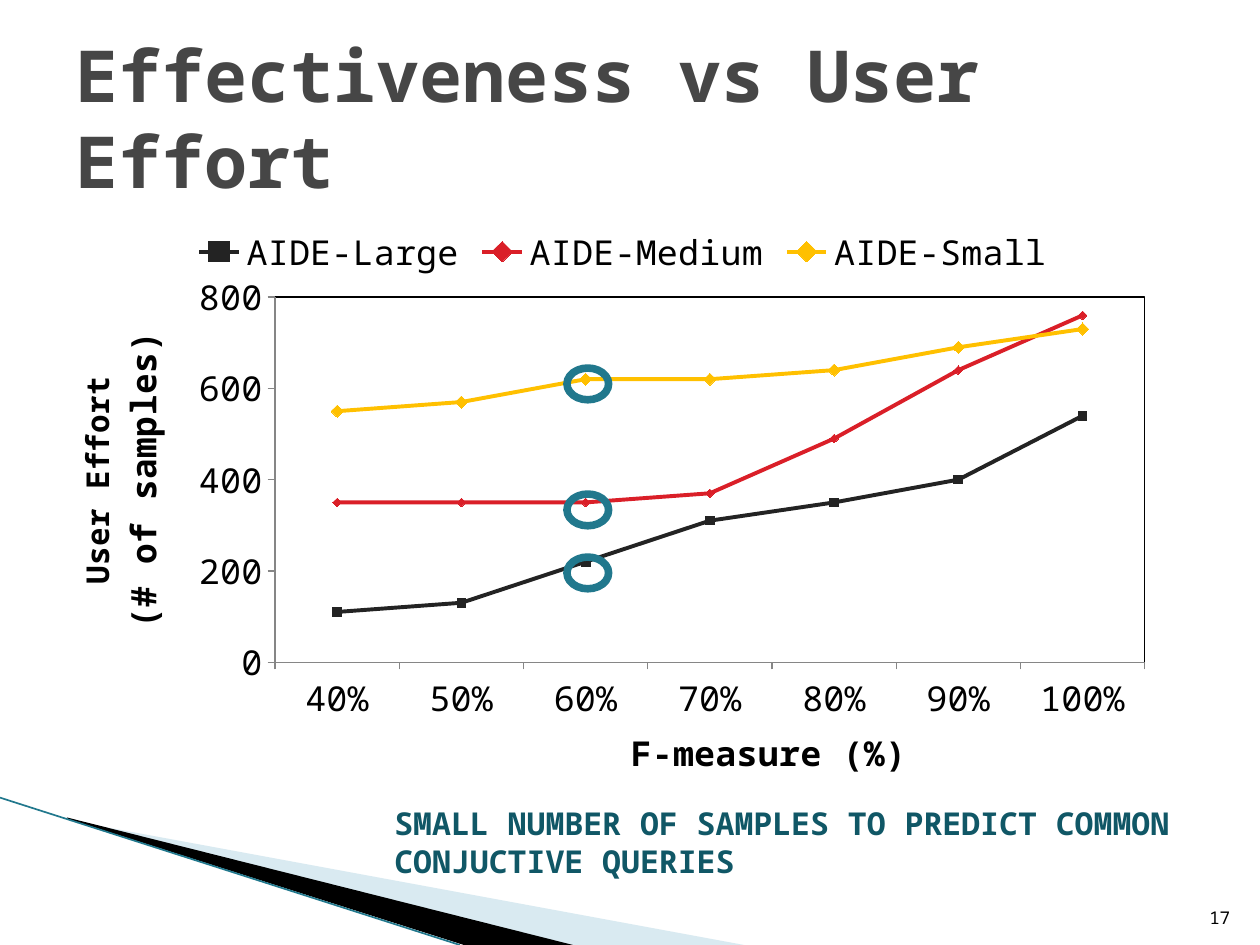
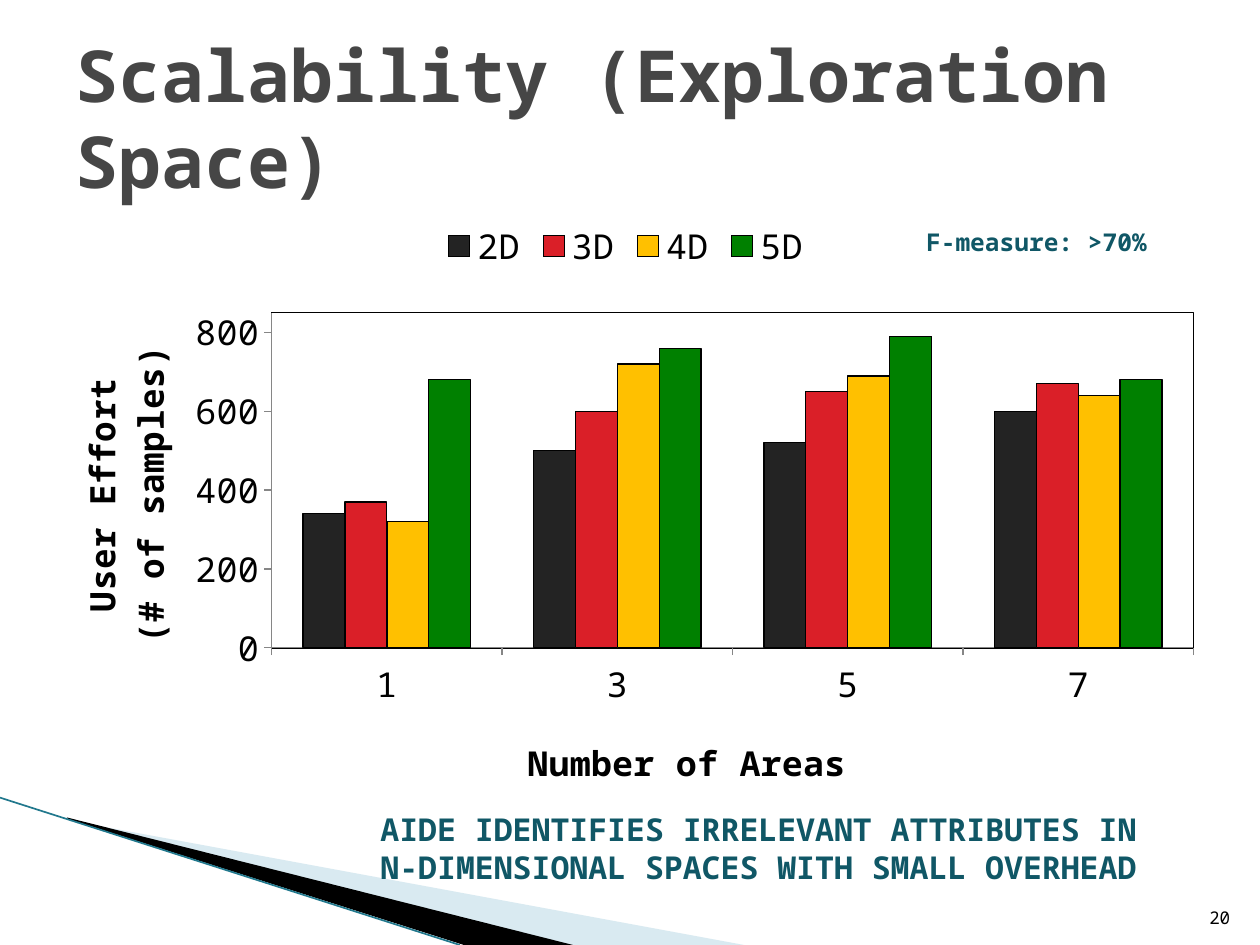
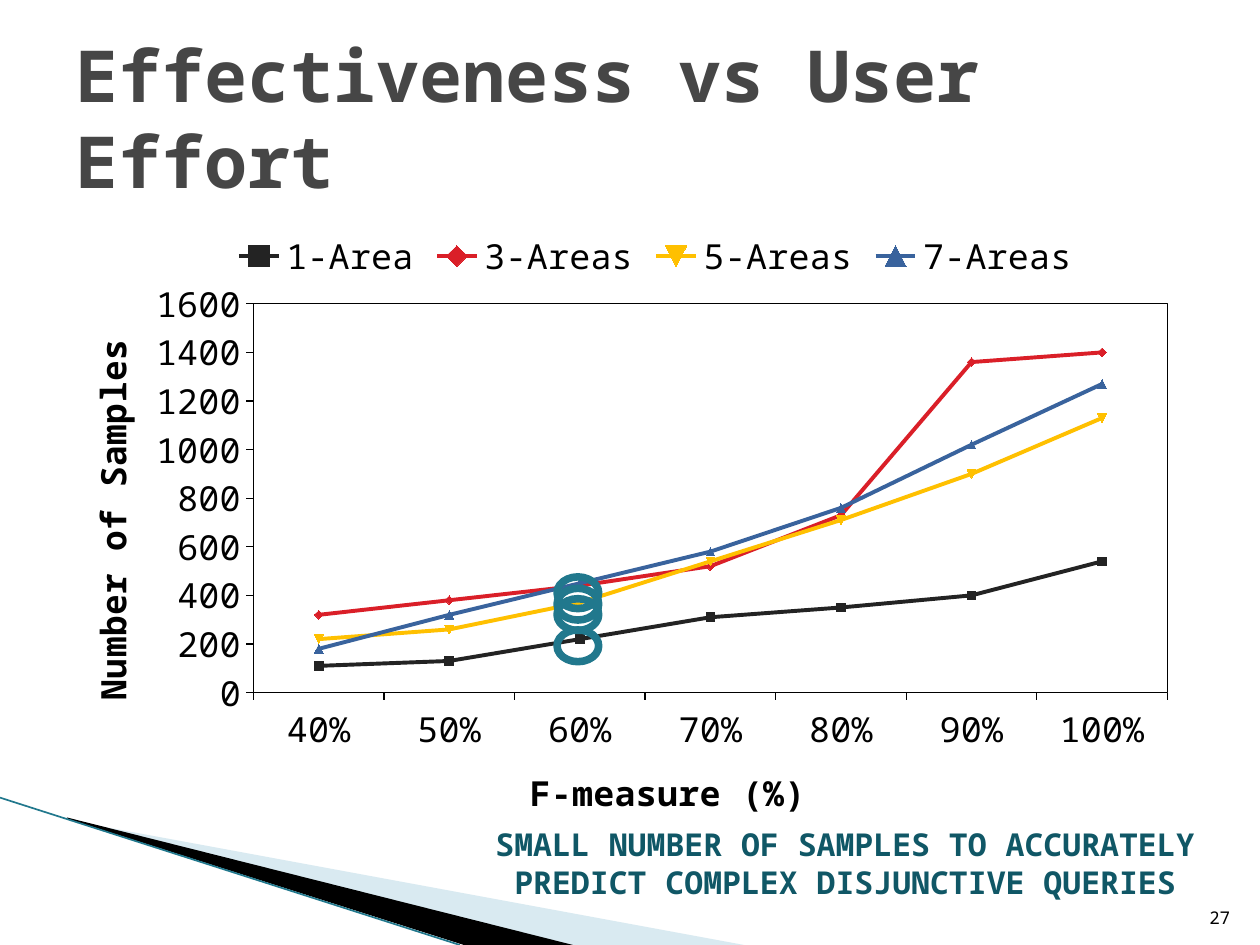
from lxml.etree import SubElement
from pptx import Presentation
from pptx.chart.data import CategoryChartData
from pptx.dml.color import RGBColor
from pptx.enum.chart import XL_CHART_TYPE, XL_LEGEND_POSITION, XL_MARKER_STYLE, XL_TICK_MARK
from pptx.enum.shapes import MSO_CONNECTOR, MSO_SHAPE
from pptx.enum.text import MSO_ANCHOR, MSO_AUTO_SIZE, PP_ALIGN
from pptx.oxml import parse_xml
from pptx.oxml.ns import nsdecls, qn
from pptx.util import Cm, Pt

FONT = "Noto Sans Mono"
BLACK = "000000"
TITLE_GREY = "464646"
AXIS_GREY = "868686"
CAPTION_TEAL = "105766"
RING_TEAL = "21788D"
BAND_BLUE = "A0CBDC"
CHARCOAL = "232323"
RED = "DA1F28"
YELLOW = "FFC000"
GREEN = "008000"
BLUE = "39639D"

TITLE_BOX = (1.27, 0.76, 22.86, 3.18)
NUMBER_BOX = (24.03, 17.81, 1.02, 1.02)
CHART_LEFT, CHART_TOP, CHART_WIDTH = 1.27, 4.11, 22.86
RING_WIDTH, RING_HEIGHT = 0.84, 0.64
PALE_BAND = [(1.4, 16.54), (15.0, 19.05), (11.5, 19.05), (1.4, 16.51)]
BLACK_BAND = [(1.35, 16.48), (11.55, 19.05), (9.35, 19.05), (1.37, 16.51)]
BAND_EDGE = (0, 16.08, 9.27, 19.05)

F_MEASURES = [0.4, 0.5, 0.6, 0.7, 0.8, 0.9, 1.0]
F_MEASURE_TITLE = [("F-measure (%)", 20)]
ONE_AREA_EFFORT = [110, 130, 220, 310, 350, 400, 540]
AUTOMATIC = (XL_MARKER_STYLE.AUTOMATIC, 5)
DIAMOND = (XL_MARKER_STYLE.DIAMOND, 7)

SLIDES = [
    {
        "title": "Effectiveness vs User Effort",
        "number": "17",
        "chart": {
            "type": XL_CHART_TYPE.LINE_MARKERS,
            "height": 11.76,
            "categories": F_MEASURES,
            "category_format": "0%",
            "series": [
                ("AIDE-Large", ONE_AREA_EFFORT, CHARCOAL, AUTOMATIC),
                ("AIDE-Medium", [350, 350, 350, 370, 490, 640, 760], RED, AUTOMATIC),
                ("AIDE-Small", [550, 570, 620, 620, 640, 690, 730], YELLOW, DIAMOND),
            ],
            "maximum": 800,
            "axis_color": AXIS_GREY,
            "category_title": F_MEASURE_TITLE,
            "value_title": [("User Effort", 18), ("(# of samples)", 20)],
            "plot": (0.187, 0.163, 0.767, 0.638),
            "legend_at": (0.11, 0.03),
            "category_title_at": (0.495, 0.9),
            "value_title_at": (0.005, 0.225),
        },
        "captions": [
            ((7.7, 16.08, 17.7, 1.8), 18, PP_ALIGN.LEFT,
             ["SMALL NUMBER OF SAMPLES TO PREDICT COMMON CONJUCTIVE QUERIES"]),
        ],
        "rings": (11.43, [11.23, 9.96, 7.42]),
    },
    {
        "title": "Scalability (Exploration Space)",
        "number": "20",
        "chart": {
            "type": XL_CHART_TYPE.COLUMN_CLUSTERED,
            "height": 11.96,
            "categories": [1, 3, 5, 7],
            "category_format": "General",
            "series": [
                ("2D", [340, 500, 520, 600], CHARCOAL, None),
                ("3D", [370, 600, 650, 670], RED, None),
                ("4D", [320, 720, 690, 640], YELLOW, None),
                ("5D", [680, 760, 790, 680], GREEN, None),
            ],
            "maximum": 850,
            "axis_color": AXIS_GREY,
            "category_title": [("Number of Areas", 20)],
            "value_title": [("User Effort", 20), ("(# of samples)", 20)],
            "plot": (0.184, 0.188, 0.813, 0.578),
            "legend_at": (0.33, 0.02),
            "category_title_at": (0.404, 0.906),
            "value_title_at": (0.007, 0.25),
        },
        "captions": [
            ((7.42, 16.2, 16.2, 1.8), 18, PP_ALIGN.LEFT,
             ["AIDE IDENTIFIES IRRELEVANT ATTRIBUTES IN",
              "N-DIMENSIONAL SPACES WITH SMALL OVERHEAD"]),
            ((18.42, 4.45, 5.2, 0.86), 14, PP_ALIGN.LEFT, ["F-measure: >70%"]),
        ],
        "rings": (0, []),
    },
    {
        "title": "Effectiveness vs User Effort",
        "number": "27",
        "chart": {
            "type": XL_CHART_TYPE.LINE_MARKERS,
            "height": 12.57,
            "categories": F_MEASURES,
            "category_format": "0%",
            "series": [
                ("1-Area", ONE_AREA_EFFORT, CHARCOAL, AUTOMATIC),
                ("3-Areas", [320, 380, 440, 520, 730, 1360, 1400], RED, AUTOMATIC),
                ("5-Areas", [220, 260, 370, 540, 710, 900, 1130], YELLOW, AUTOMATIC),
                ("7-Areas", [180, 320, 450, 580, 760, 1020, 1270], BLUE, AUTOMATIC),
            ],
            "maximum": 1600,
            "axis_color": BLACK,
            "category_title": F_MEASURE_TITLE,
            "value_title": [("Number of Samples", 20)],
            "plot": (0.168, 0.163, 0.806, 0.634),
            "legend_at": (0.145, 0.035),
            "category_title_at": (0.406, 0.905),
            "value_title_at": (0.013, 0.22),
        },
        "captions": [
            ((9.63, 16.51, 14.81, 1.8), 18, PP_ALIGN.CENTER,
             ["SMALL NUMBER OF SAMPLES TO ACCURATELY",
              "PREDICT COMPLEX DISJUNCTIVE QUERIES"]),
        ],
        "rings": (11.23, [12.7, 11.86, 11.63, 12.07]),
    },
]


def rgb(color):
    return RGBColor.from_string(color)


def box(values):
    return [Cm(value) for value in values]


def set_font(font, size, color, bold=False):
    font.name = FONT
    font.size = Pt(size)
    font.bold = bold
    font.color.rgb = rgb(color)


def set_line(line, color, width=0.75):
    line.color.rgb = rgb(color)
    line.width = Pt(width)


def set_fill(fill, color):
    fill.solid()
    fill.fore_color.rgb = rgb(color)


def add_text(slide, place, lines, size, color, bold=False,
             alignment=PP_ALIGN.LEFT, anchor=MSO_ANCHOR.TOP):
    frame = slide.shapes.add_textbox(*box(place)).text_frame
    frame.word_wrap = True
    frame.vertical_anchor = anchor
    frame.text = "\n".join(lines)
    for paragraph in frame.paragraphs:
        paragraph.alignment = alignment
        set_font(paragraph.font, size, color, bold)


def add_title(slide, text):
    title = slide.shapes.title
    title.left, title.top, title.width, title.height = box(TITLE_BOX)
    frame = title.text_frame
    frame.text = text
    frame.word_wrap = True
    frame.auto_size = MSO_AUTO_SIZE.NONE
    frame.vertical_anchor = MSO_ANCHOR.MIDDLE
    paragraph = frame.paragraphs[0]
    paragraph.alignment = PP_ALIGN.LEFT
    set_font(paragraph.font, 41, TITLE_GREY, True)


def add_band(slide, points, color, opacity=100):
    start, *rest = [box(point) for point in points]
    builder = slide.shapes.build_freeform(*start)
    builder.add_line_segments(rest)
    band = builder.convert_to_shape()
    band.shadow.inherit = False
    set_fill(band.fill, color)
    band.line.fill.background()
    if opacity < 100:
        color_element = next(band._element.spPr.iter(qn("a:srgbClr")))
        SubElement(color_element, qn("a:alpha")).set("val", str(opacity * 1000))


def add_corner(slide):
    add_band(slide, PALE_BAND, BAND_BLUE, 40)
    add_band(slide, BLACK_BAND, BLACK)
    edge = slide.shapes.add_connector(MSO_CONNECTOR.STRAIGHT, *box(BAND_EDGE))
    set_line(edge.line, RING_TEAL, 0.95)
    SubElement(edge._element.spPr, qn("a:effectLst"))


def set_layout(parent, index, x, y, width=None, height=None):
    for layout in parent.findall(qn("c:layout")):
        parent.remove(layout)
    layout = parse_xml(f"<c:layout {nsdecls('c')}/>")
    manual = SubElement(layout, qn("c:manualLayout"))
    settings = [("xMode", "edge"), ("yMode", "edge"), ("x", x), ("y", y)]
    if width:
        settings = [("layoutTarget", "inner"), *settings, ("w", width), ("h", height)]
    for name, value in settings:
        SubElement(manual, qn(f"c:{name}")).set("val", str(value))
    parent.insert(index, layout)


def format_axis(axis, title_lines, title_at, color, rotation):
    axis.has_major_gridlines = False
    axis.major_tick_mark = XL_TICK_MARK.OUTSIDE
    axis.minor_tick_mark = XL_TICK_MARK.NONE
    set_line(axis.format.line, color)
    set_font(axis.tick_labels.font, 20, BLACK)
    frame = axis.axis_title.text_frame
    frame.text = "\n".join(text for text, size in title_lines)
    for paragraph, (text, size) in zip(frame.paragraphs, title_lines):
        set_font(paragraph.font, size, BLACK, True)
    title = axis.axis_title._element
    next(title.iter(qn("a:bodyPr"))).set("rot", str(rotation * 60000))
    set_layout(title, 1, *title_at)


def format_series(series, color, marker):
    if marker is None:
        set_fill(series.format.fill, color)
        set_line(series.format.line, BLACK)
        return
    series.smooth = False
    set_line(series.format.line, color, 2.25)
    series.marker.style, series.marker.size = marker
    set_fill(series.marker.format.fill, color)
    set_line(series.marker.format.line, color)


def add_effort_chart(slide, content):
    data = CategoryChartData()
    data.categories = content["categories"]
    data.categories.number_format = content["category_format"]
    for name, values, color, marker in content["series"]:
        data.add_series(name, values)
    place = (CHART_LEFT, CHART_TOP, CHART_WIDTH, content["height"])
    chart = slide.shapes.add_chart(content["type"], *box(place), data).chart
    chart.has_title = False
    set_font(chart.font, 20, BLACK)

    plot = chart.plots[0]
    plot.vary_by_categories = False
    if content["type"] == XL_CHART_TYPE.COLUMN_CLUSTERED:
        plot.gap_width = 150
        plot.overlap = 0
    for series, (name, values, color, marker) in zip(plot.series, content["series"]):
        format_series(series, color, marker)

    color = content["axis_color"]
    format_axis(chart.category_axis, content["category_title"],
                content["category_title_at"], color, 0)
    format_axis(chart.value_axis, content["value_title"],
                content["value_title_at"], color, -90)
    category_labels = chart.category_axis.tick_labels
    category_labels.number_format = content["category_format"]
    category_labels.number_format_is_linked = False
    chart.value_axis.minimum_scale = 0
    chart.value_axis.maximum_scale = content["maximum"]
    chart.value_axis.major_unit = 200

    chart.has_legend = True
    chart.legend.position = XL_LEGEND_POSITION.TOP
    chart.legend.include_in_layout = False
    set_font(chart.legend.font, 20, BLACK)
    set_layout(chart.legend._element, 1, *content["legend_at"])

    plot_area = next(chart._chartSpace.iter(qn("c:plotArea")))
    set_layout(plot_area, 0, *content["plot"])
    plot_area.append(parse_xml(
        f'<c:spPr {nsdecls("c", "a")}><a:noFill/><a:ln w="9525"><a:solidFill>'
        f'<a:srgbClr val="{BLACK}"/></a:solidFill></a:ln></c:spPr>'))


def add_rings(slide, left, tops):
    for top in tops:
        ring = slide.shapes.add_shape(
            MSO_SHAPE.OVAL, *box((left, top, RING_WIDTH, RING_HEIGHT)))
        ring.shadow.inherit = False
        ring.fill.background()
        set_line(ring.line, RING_TEAL, 4.33)


def main():
    presentation = Presentation()
    presentation.slide_width, presentation.slide_height = Cm(25.4), Cm(19.05)
    for content in SLIDES:
        slide = presentation.slides.add_slide(presentation.slide_layouts[5])
        add_corner(slide)
        add_title(slide, content["title"])
        add_effort_chart(slide, content["chart"])
        for place, size, alignment, lines in content["captions"]:
            add_text(slide, place, lines, size, CAPTION_TEAL, True, alignment)
        add_rings(slide, *content["rings"])
        add_text(slide, NUMBER_BOX, [content["number"]], 10, BLACK,
                 alignment=PP_ALIGN.RIGHT, anchor=MSO_ANCHOR.BOTTOM)
    presentation.save("out.pptx")


if __name__ == "__main__":
    main()
